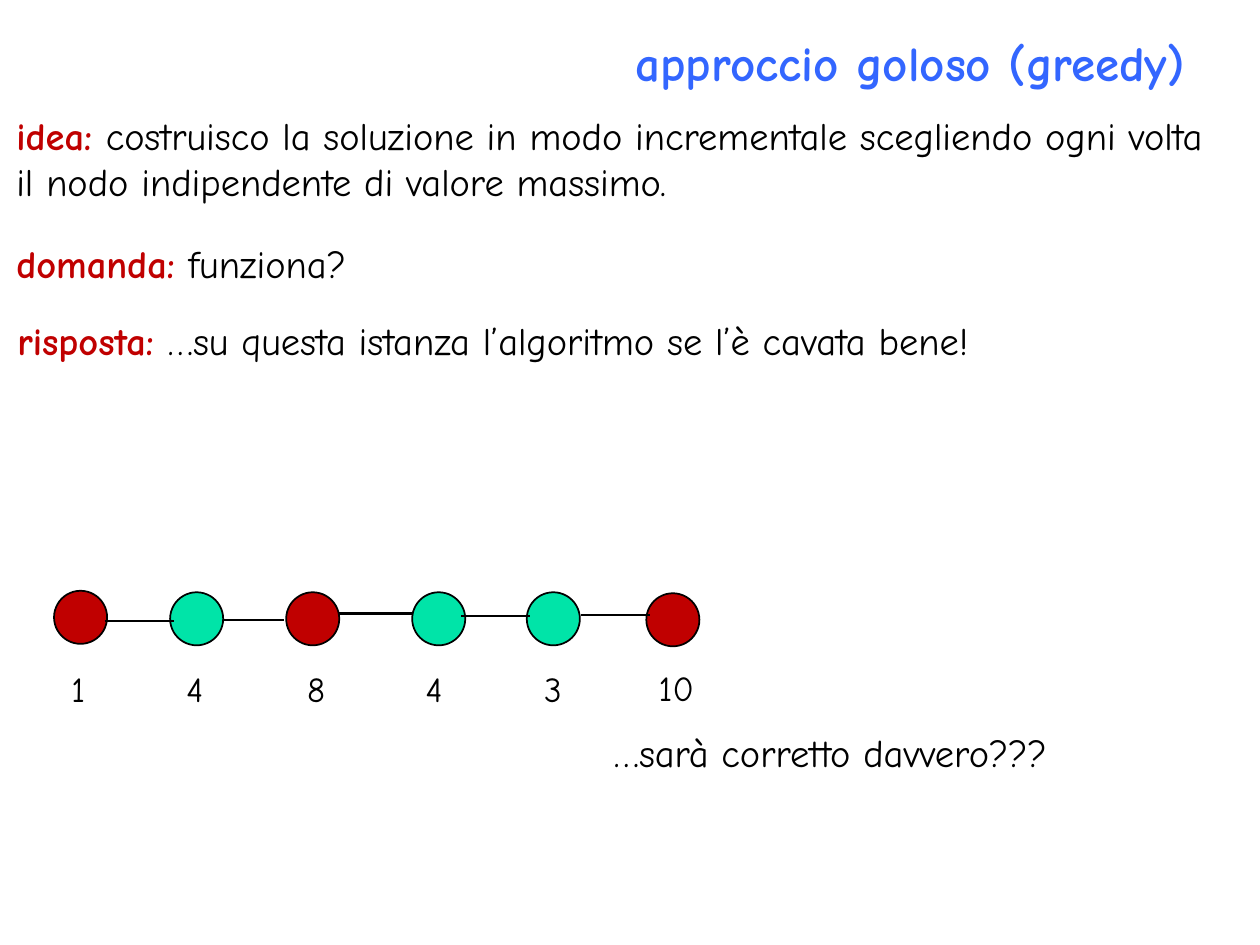
import pptx
import pptx.dml.color
import pptx.enum.shapes
import pptx.enum.text
import pptx.oxml.ns
import pptx.util
from lxml import etree
from pptx.util import Cm, Pt

RGBColor = pptx.dml.color.RGBColor
BLACK = RGBColor(0, 0, 0)
BLUE = RGBColor(0x33, 0x66, 0xFF)
RED = RGBColor(0xC0, 0, 0)
GREEN = RGBColor(0, 0xE4, 0xA8)
FONT = "Comic Neue"

presentation = pptx.Presentation()
presentation.slide_width = Cm(25.4)
presentation.slide_height = Cm(19.05)
slide = presentation.slides.add_slide(presentation.slide_layouts[6])


def add_text(left, top, width, height, size, *runs):
    """Add a one-paragraph box in cm; each run is (text, colour, bold)."""
    box = slide.shapes.add_textbox(Cm(left), Cm(top), Cm(width), Cm(height))
    box.text_frame.word_wrap = True
    paragraph = box.text_frame.paragraphs[0]
    for text, colour, bold in runs:
        run = paragraph.add_run()
        run.text = text
        run.font.name = FONT
        run.font.size = Pt(size)
        run.font.bold = bold
        run.font.color.rgb = colour
    return paragraph


title = add_text(1.27, 0.53, 22.86, 2.54, 28, ("approccio goloso (greedy)", BLUE, True))
title.alignment = pptx.enum.text.PP_ALIGN.RIGHT
title.space_before = Pt(5.6)

statements = [
    (0.08, 2.13, 24.92, 2.13, "idea: ",
     "costruisco la soluzione in modo incrementale scegliendo ogni volta "
     "il nodo indipendente di valore massimo."),
    (0.08, 4.72, 24.92, 1.19, "domanda: ", "funziona?"),
    (0.1, 6.27, 24.41, 4.55, "risposta: ",
     "…su questa istanza l’algoritmo se l’è cavata bene!"),
]
for left, top, width, height, heading, body in statements:
    add_text(left, top, width, height, 22, (heading, RED, True), (body, BLACK, False))

# Path graph: node left and top, colour, weight, weight left, top and width
nodes = [
    (1.09, 11.91, RED, "1", 1.19, 13.34, 0.79),
    (3.43, 11.94, GREEN, "4", 3.51, 13.34, 0.79),
    (5.77, 11.94, RED, "8", 5.94, 13.34, 0.79),
    (8.31, 11.94, GREEN, "4", 8.33, 13.34, 0.79),
    (10.62, 11.94, GREEN, "3", 10.72, 13.34, 0.79),
    (13.03, 11.96, RED, "10", 13.03, 13.31, 1.75),
]
NODE_SIZE = Cm(1.07)
for left, top, colour, weight, weight_left, weight_top, weight_width in nodes:
    node = slide.shapes.add_shape(
        pptx.enum.shapes.MSO_SHAPE.OVAL, Cm(left), Cm(top), NODE_SIZE, NODE_SIZE)
    node.shadow.inherit = False
    node.fill.solid()
    node.fill.fore_color.rgb = colour
    node.line.color.rgb = BLACK
    node.line.width = Pt(1)
    add_text(weight_left, weight_top, weight_width, 1.12, 20, (weight, BLACK, False))

# Edges: start, end, height on the slide
edges = [
    (2.11, 3.51, 12.52),
    (4.52, 5.72, 12.5),
    (6.81, 8.31, 12.37),
    (9.3, 10.69, 12.42),
    (11.71, 13.11, 12.4),
]
for start, end, y in edges:
    edge = slide.shapes.add_connector(
        pptx.enum.shapes.MSO_CONNECTOR.STRAIGHT, Cm(start), Cm(y), Cm(end), Cm(y))
    edge.line.color.rgb = BLACK
    edge.line.width = Pt(1.5)
    etree.SubElement(edge._element.spPr, pptx.oxml.ns.qn("a:effectLst"))

add_text(12.12, 14.58, 11.79, 2.16, 22, ("…sarà corretto davvero???", BLACK, False))

presentation.save("out.pptx")
